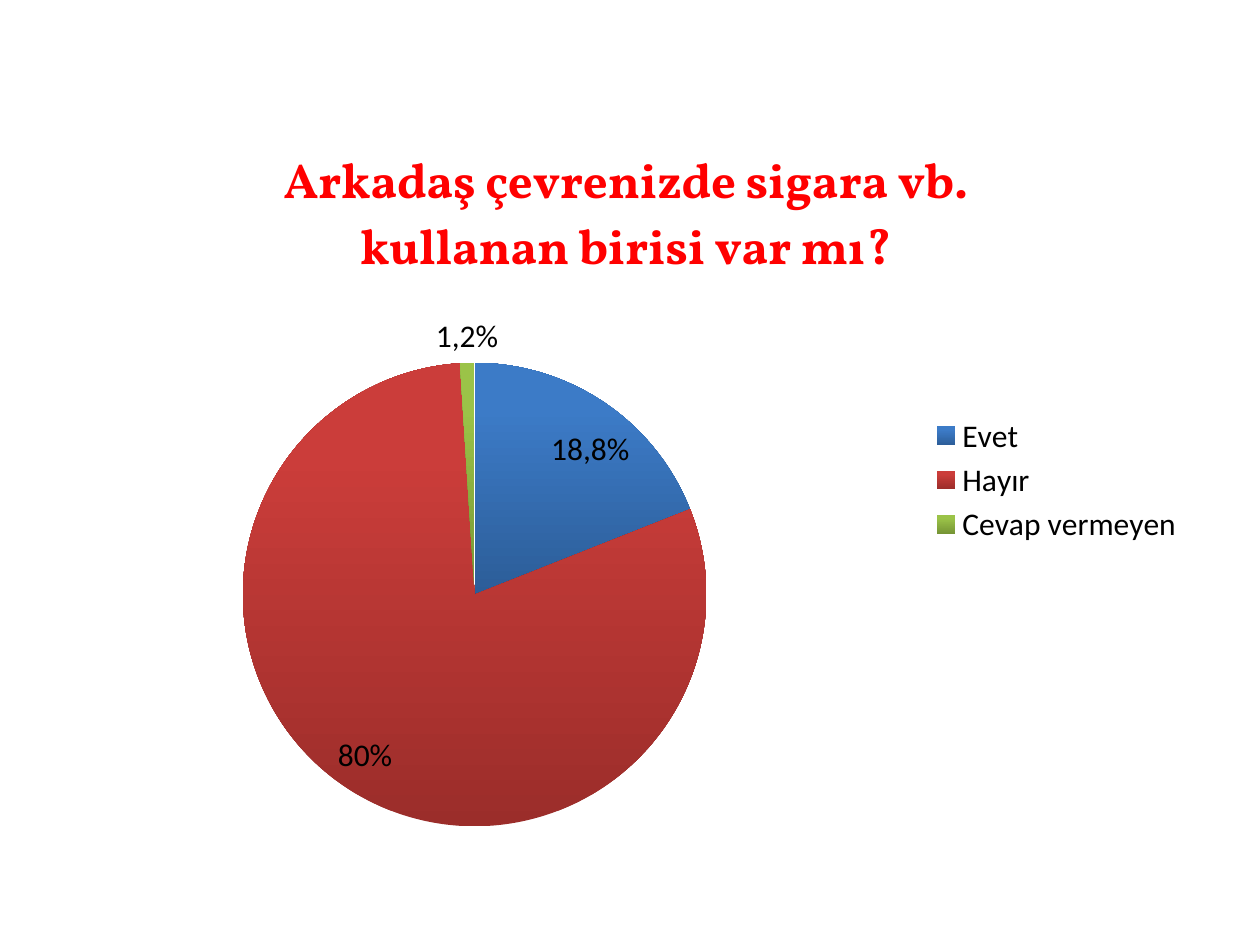
"""Build a survey slide with one pie chart about smoking among friends."""
from dataclasses import dataclass

import pptx
import pptx.chart.data
import pptx.dml.color
import pptx.enum.chart
import pptx.util
from lxml import etree

COLORS = {
    "title": "FF0000", "text": "000000",
    "blue_dark": "2C5D98", "blue_light": "3C7BC7",
    "red_dark": "9B2D2A", "red_light": "CB3D3A",
    "green_dark": "769535", "green_light": "9BC348",
}
QUESTION = "Arkadaş çevrenizde sigara vb. kullanan birisi var mı?"
POSITION = pptx.enum.chart.XL_LABEL_POSITION


@dataclass
class Answer:
    name: str
    percent: int
    color: str
    label: str
    position: POSITION


ANSWERS = [
    Answer("Evet", 19, "blue", "18,8%", POSITION.BEST_FIT),
    Answer("Hayır", 80, "red", "", POSITION.BEST_FIT),
    Answer("Cevap vermeyen", 1, "green", "1,2%", POSITION.OUTSIDE_END),
]


def rgb(name: str) -> pptx.dml.color.RGBColor:
    return pptx.dml.color.RGBColor.from_string(COLORS[name])


def style_font(font, name: str, size: float, color: str, bold: bool = False) -> None:
    font.name, font.size, font.bold = name, pptx.util.Pt(size), bold
    font.color.rgb = rgb(color)


def place(parent, x: float, y: float, w: float, h: float, inner: bool = False) -> None:
    """Give a chart part a manual layout in shares of the chart."""
    ns = "{http://schemas.openxmlformats.org/drawingml/2006/chart}"
    for old in parent.findall(ns + "layout"):
        parent.remove(old)
    layout = etree.Element(ns + "layout")
    manual = etree.SubElement(layout, ns + "manualLayout")
    values = {"layoutTarget": "inner"} if inner else {}
    values |= {"xMode": "edge", "yMode": "edge", "x": x, "y": y, "w": w, "h": h}
    for tag, value in values.items():
        etree.SubElement(manual, ns + tag).set("val", str(value))
    parent.insert(0 if inner else 1, layout)


def style_slice(point, answer: Answer) -> None:
    """Shade one slice from dark below to light above and set its label."""
    fill = point.format.fill
    fill.gradient()
    fill.gradient_angle = 90
    for stop, shade, share in zip(fill.gradient_stops, ("dark", "light"), (0, 0.8)):
        stop.color.rgb = rgb(f"{answer.color}_{shade}")
        stop.position = share
    label = point.data_label
    if answer.label:
        r = label.text_frame.paragraphs[0].add_run()
        r.text = answer.label
        style_font(r.font, "Calibri", 18, "text")
        label.position = answer.position


def add_pie(s, width: int, height: int) -> None:
    data = pptx.chart.data.CategoryChartData()
    data.categories = [a.name for a in ANSWERS]
    data.add_series(QUESTION, [a.percent for a in ANSWERS])
    chart = s.shapes.add_chart(
        pptx.enum.chart.XL_CHART_TYPE.PIE, int(width * 0.043), int(height * 0.123),
        int(width * 0.907), int(height * 0.77), data).chart
    style_font(chart.font, "Calibri", 18, "text")

    chart.has_title = True
    r = chart.chart_title.text_frame.paragraphs[0].add_run()
    r.text = QUESTION
    style_font(r.font, "Vollkorn", 28, "title", bold=True)
    chart.chart_title.include_in_layout = False

    chart.has_legend = True
    chart.legend.position = pptx.enum.chart.XL_LEGEND_POSITION.RIGHT
    chart.legend.include_in_layout = False
    place(chart.legend._element, 0.762, 0.405, 0.23, 0.19)

    plot = chart.plots[0]
    plot.vary_by_categories = True
    place(plot._element.getparent(), 0.165, 0.339, 0.406, 0.637, inner=True)
    labels = plot.series[0].data_labels
    labels.show_percentage, labels.show_value = True, False
    labels.number_format, labels.number_format_is_linked = "0%", False
    labels.position = POSITION.BEST_FIT
    style_font(labels.font, "Calibri", 18, "text")
    for i, answer in enumerate(ANSWERS):
        style_slice(plot.series[0].points[i], answer)


def main() -> None:
    prs = pptx.Presentation()
    prs.slide_width, prs.slide_height = pptx.util.Inches(10), pptx.util.Inches(7.5)
    s = prs.slides.add_slide(prs.slide_layouts[6])
    add_pie(s, prs.slide_width, prs.slide_height)
    prs.save("out.pptx")


if __name__ == "__main__":
    main()
